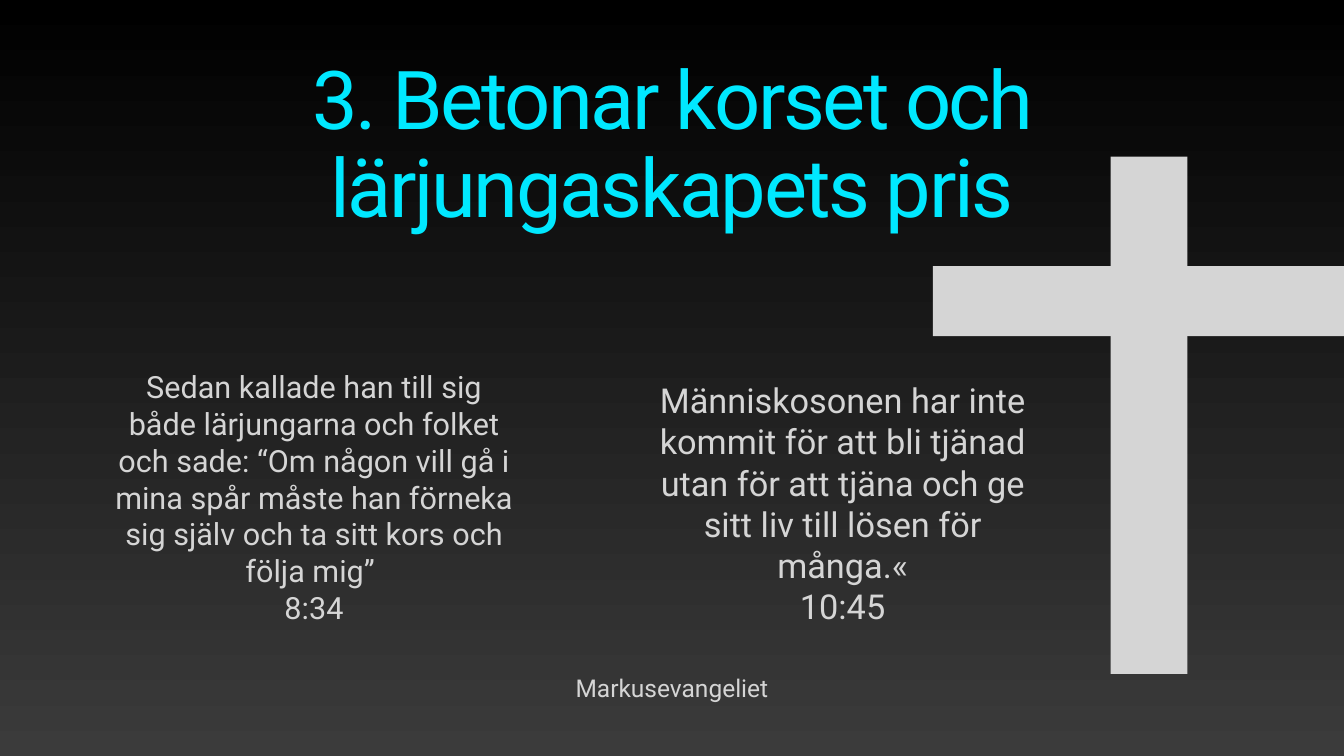
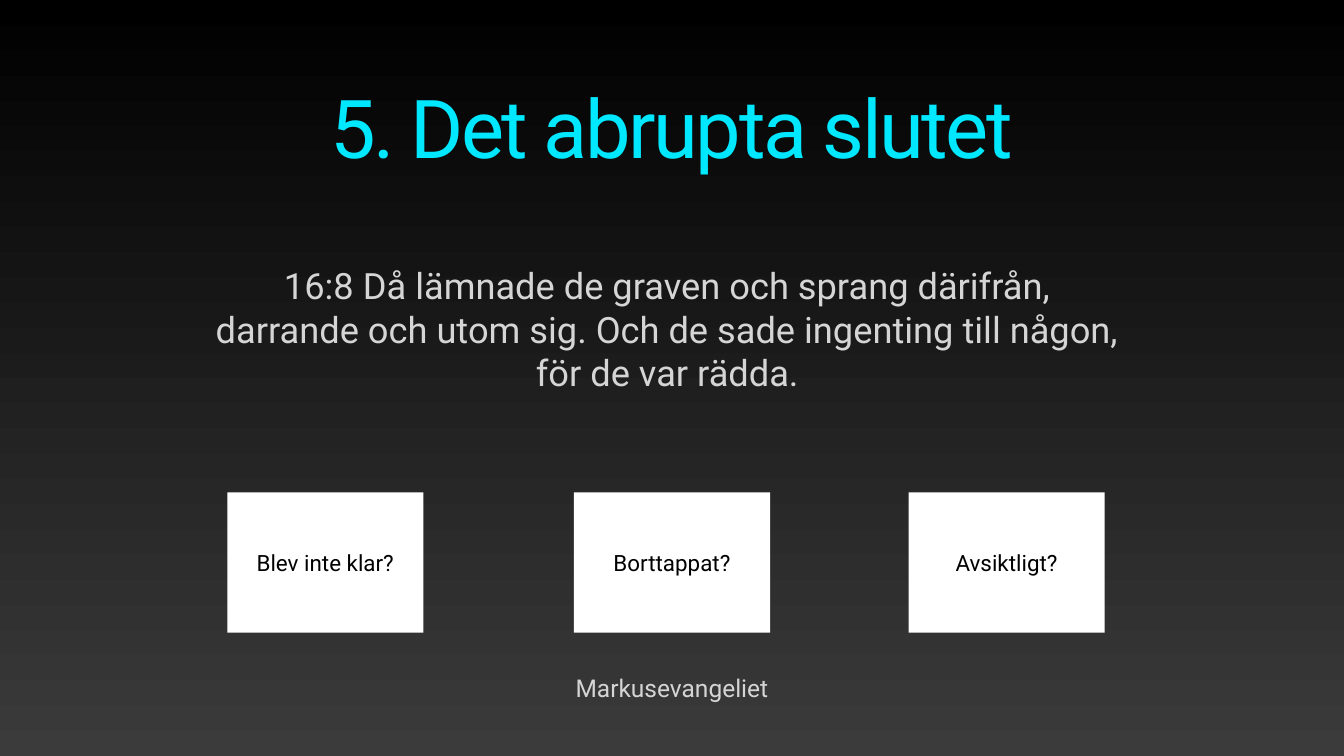
import pptx
import pptx.util
import pptx.dml.color
import pptx.enum.shapes
import pptx.enum.text

Inches = pptx.util.Inches
ANCHOR = pptx.enum.text.MSO_ANCHOR

FONT = "Roboto"
BLACK, CHARCOAL, SILVER = "000000", "3B3B3B", "D5D5D5"
WHITE, CYAN = "FFFFFF", "00E8FF"
PAGE_WIDTH, PAGE_HEIGHT = 26.67, 15
MARGIN, CONTENT_WIDTH = 1.39, 23.89
TITLE_HEIGHT = 4.24


def color(hex_string):
    return pptx.dml.color.RGBColor.from_string(hex_string)


def write(shape, *lines, size, ink=SILVER, anchor=ANCHOR.TOP, line_spacing=None, tracking=None):
    """Fill a shape with centred paragraphs, one for each line."""
    frame = shape.text_frame
    frame.word_wrap = True
    frame.vertical_anchor = anchor
    frame.margin_left = frame.margin_right = Inches(0.06)
    frame.margin_top = frame.margin_bottom = Inches(0.06)
    for index, line in enumerate(lines):
        para = frame.add_paragraph() if index else frame.paragraphs[0]
        para.alignment = pptx.enum.text.PP_ALIGN.CENTER
        if line_spacing:
            para.line_spacing = line_spacing
        span = para.add_run()
        span.text = line
        span.font.name = FONT
        span.font.size = pptx.util.Pt(size)
        span.font.color.rgb = color(ink)
        if tracking:
            span.font._element.set("spc", str(round(tracking * 100)))


def add_text(page, box, *lines, **style):
    write(page.shapes.add_textbox(*map(Inches, box)), *lines, **style)


def add_block(page, box, fill):
    block = page.shapes.add_shape(
        pptx.enum.shapes.MSO_SHAPE.RECTANGLE, *map(Inches, box))
    block.shadow.inherit = False
    block.fill.solid()
    block.fill.fore_color.rgb = color(fill)
    block.line.fill.background()
    return block


def add_page(deck, title, title_top):
    """Start a page with the shared background, title and footer."""
    page = deck.slides.add_slide(deck.slide_layouts[6])
    # Background, dark at the top
    fill = page.background.fill
    fill.gradient()
    fill.gradient_angle = 270
    for stop, shade in zip(fill.gradient_stops, (BLACK, CHARCOAL)):
        stop.color.rgb = color(shade)
    # Title and footer
    add_text(page, (MARGIN, title_top, CONTENT_WIDTH, TITLE_HEIGHT), title,
             size=116, ink=CYAN, anchor=ANCHOR.BOTTOM, line_spacing=0.9, tracking=-3.5)
    add_text(page, (MARGIN, 13.3, CONTENT_WIDTH, 0.76), "Markusevangeliet", size=35)
    return page


def add_cross(page, box):
    """Draw a cross whose arm runs past the right edge of the page."""
    left, top, width, height = box
    add_block(page, (left, top + 2.17, width, 1.39), SILVER)
    add_block(page, (left + 3.53, top, 1.52, height), SILVER)


def add_answers(page, box, answers, lefts):
    """Place equal cards in a row, at offsets from the box's left side."""
    left, top, width, height = box
    for answer, offset in zip(answers, lefts):
        card = add_block(page, (left + offset, top, width, height), WHITE)
        write(card, answer, size=32, ink=BLACK, anchor=ANCHOR.MIDDLE)


def build_cross_page(deck):
    page = add_page(deck, "3. Betonar korset och lärjungaskapets pris", 0.48)
    add_text(page, (2.17, 7.25, 8.12, 6.53),
             "Sedan kallade han till sig både lärjungarna och folket och sade: "
             "“Om någon vill gå i mina spår måste han förneka sig själv och ta "
             "sitt kors och följa mig” ",
             "8:34", size=43.7)
    add_cross(page, (18.51, 3.11, 11.94, 10.26))
    add_text(page, (12.66, 7.22, 8.12, 5.52),
             "Människosonen har inte kommit för att bli tjänad utan för att "
             "tjäna och ge sitt liv till lösen för många.«",
             "10:45", size=49, anchor=ANCHOR.MIDDLE)


def build_ending_page(deck):
    page = add_page(deck, "5. Det abrupta slutet", -0.68)
    add_text(page, (2.95, 5.17, 20.77, 3),
             "16:8 Då lämnade de graven och sprang därifrån, ",
             "darrande och utom sig. Och de sade ingenting till någon, ",
             "för de var rädda. ", size=51.8)
    add_answers(page, (4.51, 9.77, 3.89, 2.78),
                ("Blev inte klar?", "Borttappat?", "Avsiktligt?"), (0, 6.88, 13.52))


def main():
    deck = pptx.Presentation()
    deck.slide_width, deck.slide_height = Inches(PAGE_WIDTH), Inches(PAGE_HEIGHT)
    build_cross_page(deck)
    build_ending_page(deck)
    deck.save("out.pptx")


if __name__ == "__main__":
    main()
